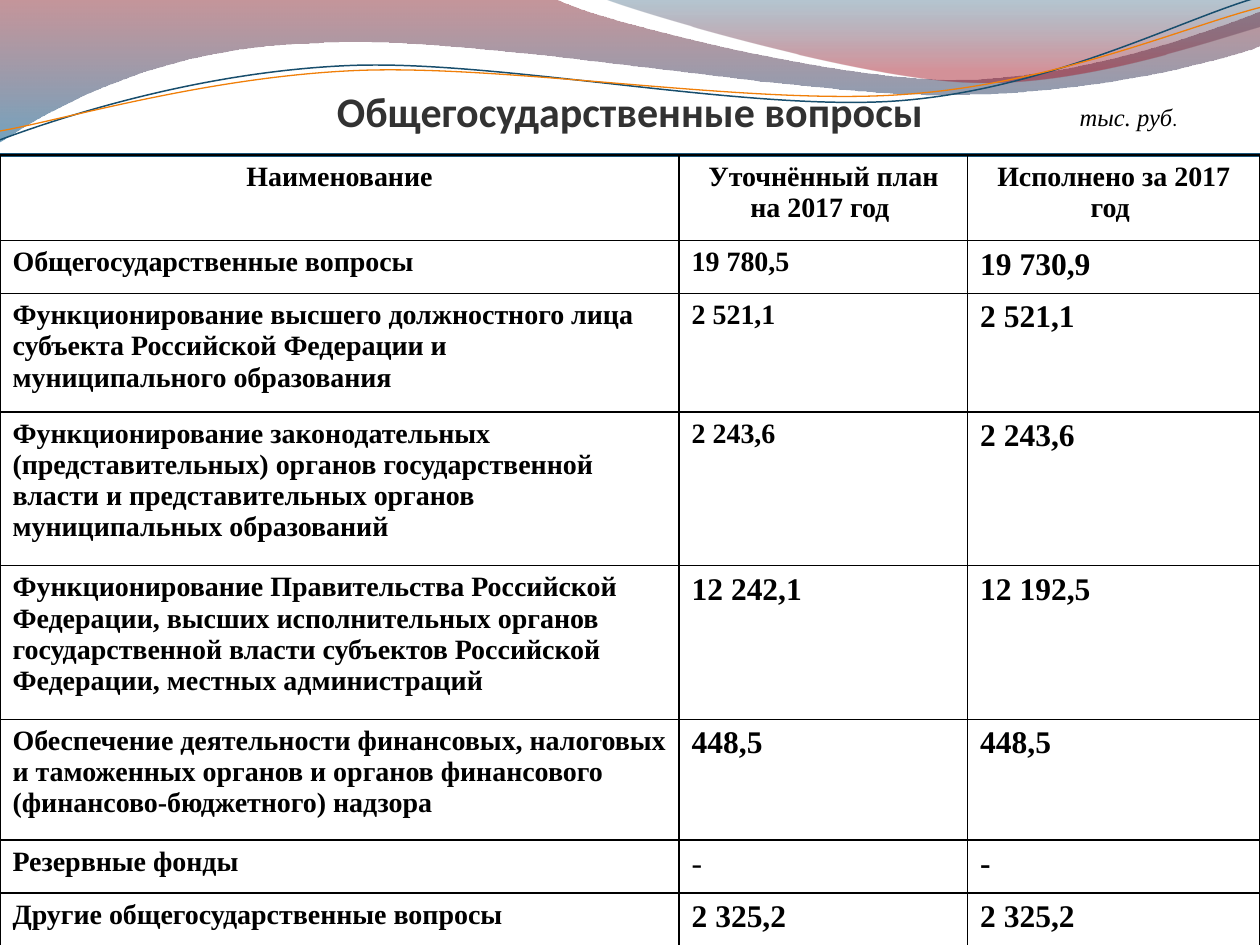
from math import cos, radians, sin

from lxml.etree import SubElement
from pptx import Presentation
from pptx.dml.color import RGBColor as RGB
from pptx.enum.shapes import MSO_CONNECTOR as Conn
from pptx.enum.text import MSO_ANCHOR as Anchor, PP_ALIGN as Align
from pptx.oxml.ns import qn
from pptx.util import Inches, Pt

BLACK = RGB(0x00, 0x00, 0x00)
GREY = RGB(0x32, 0x32, 0x32)
WINE = RGB(0x7E, 0x16, 0x21)
BLUE = RGB(0x00, 0x56, 0x89)
NAVY = RGB(0x09, 0x44, 0x67)
RED = RGB(0xA1, 0x0F, 0x1F)
TEAL = RGB(0x18, 0x4E, 0x6D)
ORANGE = RGB(0xF0, 0x7F, 0x09)
STEEL = RGB(0x1B, 0x58, 0x7C)
SERIF, SANS = "Times New Roman", "Calibri"

# Each outline is a start point, then corners (2 numbers) or Bezier curves (6).
LEFT_WAVE = [(0, 0), (4.4, -0.01), (4.76, 0.17, 6.64, 0.63, 7.58, 0.63),
             (8.53, 0.63, 9.58, 0.26, 10, 0.09), (10.01, 0.36),
             (9.83, 0.44, 8.7, 0.76, 7.46, 0.75),
             (6.22, 0.75, 3.82, 0.28, 2.57, 0.34),
             (1.29, 0.36, 0.46, 0.83, -0.01, 1.13)]
RIGHT_WAVE = [(4.79, -0.01), (5.09, 0.11, 6.82, 0.62, 7.69, 0.65),
              (8.56, 0.69, 9.61, 0.32, 10, 0.21), (10, 0)]
TEAL_CURVE = [(0, 1.11), (0.48, 0.93, 1.58, 0.57, 2.77, 0.52),
              (3.95, 0.47, 5.93, 0.89, 7.13, 0.8),
              (8.33, 0.71, 9.38, 0.15, 9.98, -0.02)]
ORANGE_CURVE = [(0, 1.04), (0.47, 0.96, 1.64, 0.61, 2.83, 0.56),
                (4.03, 0.51, 5.97, 0.84, 7.17, 0.75),
                (8.36, 0.67, 9.41, 0.21, 10, 0.06)]
TILT = -2.7

COLS = [5.39, 2.29, 2.32]
HEAD = ["Наименование", "Уточнённый план на 2017 год ", "Исполнено за 2017 год "]
# Row height, name, plan, plan text size, result
ROWS = [
    (0.42, "Общегосударственные вопросы", "19 780,5", 16, "19 730,9"),
    (0.94, "Функционирование высшего должностного лица субъекта Российской "
           "Федерации и муниципального образования", "2 521,1", 16, "2 521,1"),
    (1.22, "Функционирование законодательных (представительных) органов "
           "государственной власти и представительных органов муниципальных "
           "образований", "2 243,6", 16, "2 243,6"),
    (1.22, "Функционирование Правительства Российской Федерации, высших "
           "исполнительных органов государственной власти субъектов Российской "
           "Федерации, местных администраций", "12 242,1", 18, "12 192,5"),
    (0.96, "Обеспечение деятельности финансовых, налоговых и таможенных органов "
           "и органов финансового (финансово-бюджетного) надзора",
     "448,5", 18, "448,5"),
    (0.42, "Резервные фонды", "-", 18, "-"),
    (0.42, "Другие общегосударственные вопросы", "2 325,2", 18, "2 325,2"),
]


def write(frame, text, size=16, font=SERIF, color=BLACK, bold=False,
          italic=False, align=Align.LEFT):
    """Add a run to the frame's first paragraph."""
    para = frame.paragraphs[0]
    para.alignment = align
    run = para.add_run()
    run.text = text
    face = run.font
    face.size, face.name, face.bold, face.italic = Pt(size), font, bold, italic
    face.color.rgb = color


def pairs(part):
    return list(zip(part[::2], part[1::2]))


def level(route, mid):
    """Turn a route about mid so that tilting the shape puts it back."""
    c, s = cos(radians(-TILT)), sin(radians(-TILT))
    x0, y0 = mid
    return [tuple(v for x, y in pairs(part) for v in (
        x0 + (x - x0) * c - (y - y0) * s, y0 + (x - x0) * s + (y - y0) * c))
        for part in route]


def outline(slide, box, route, close):
    left, top = box[:2]
    points = [(Inches(left + x), Inches(top + y))
              for part in route for x, y in pairs(part)]
    form = slide.shapes.build_freeform(*points[0])
    form.add_line_segments(points[1:], close=close)
    shape = form.convert_to_shape()
    shape.shadow.inherit = False
    # Join each three points of a curve into one Bezier segment.
    lines = iter(list(shape.element.iter(qn("a:lnTo"))))
    for part in route[1:]:
        first, *rest = [next(lines) for _ in pairs(part)]
        if rest:
            bend = first.makeelement(qn("a:cubicBezTo"))
            first.addprevious(bend)
            for line in (first, *rest):
                bend.append(line[0])
                line.getparent().remove(line)
    return shape


def wave(slide, box, route, stops):
    """Draw a shape shaded downwards; stops hold place, colour and opacity."""
    shape = outline(slide, box, route, True)
    shape.line.fill.background()
    fill = shape.fill
    fill.gradient()
    fill.gradient_angle = 270
    for stop, (place, color, alpha) in zip(fill.gradient_stops, stops):
        stop.position = place
        stop.color.rgb = color
    tints = shape.element.spPr.iter(qn("a:srgbClr"))
    for tint, (place, color, alpha) in zip(tints, stops):
        SubElement(tint, qn("a:alpha"), val=str(alpha * 1000))


def curve(slide, box, route, mid, color, width):
    shape = outline(slide, box, level(route, mid), False)
    shape.rotation = TILT
    shape.fill.background()
    shape.line.color.rgb = color
    shape.line.width = Pt(width)


def banner(slide, box):
    wave(slide, box, LEFT_WAVE, [(0, WINE, 45), (1, BLUE, 55)])
    wave(slide, box, RIGHT_WAVE, [(0, NAVY, 30), (0.8, RED, 45)])
    curve(slide, box, TEAL_CURVE, (4.99, 0.58), TEAL, 0.85)
    curve(slide, box, ORANGE_CURVE, (5, 0.59), ORANGE, 0.75)


def rule(slide, box):
    left, top, width, _ = box
    line = slide.shapes.add_connector(Conn.STRAIGHT, Inches(left + width),
                                      Inches(top), Inches(left), Inches(top))
    line.line.color.rgb = STEEL
    line.line.width = Pt(2)
    SubElement(line.element.spPr, qn("a:effectLst"))


def style(cell):
    """Give the cell thin black borders and no fill."""
    props = cell._tc.get_or_add_tcPr()
    for side in "LRTB":
        edge = SubElement(props, qn(f"a:ln{side}"), w=str(Pt(1)))
        SubElement(SubElement(edge, qn("a:solidFill")), qn("a:srgbClr"),
                   val=str(BLACK))
    cell.fill.background()


def budget(slide, box):
    grid = slide.shapes.add_table(len(ROWS) + 1, len(COLS),
                                  *map(Inches, box)).table
    grid.first_row = grid.horz_banding = False
    for col, width in zip(grid.columns, COLS):
        col.width = Inches(width)
    for row, height in zip(grid.rows, [0.68] + [r[0] for r in ROWS]):
        row.height = Inches(height)
    for c, text in enumerate(HEAD):
        write(grid.cell(0, c).text_frame, text, bold=True, align=Align.CENTER)
    for r, (_, name, plan, size, done) in enumerate(ROWS, 1):
        write(grid.cell(r, 0).text_frame, name, bold=True)
        write(grid.cell(r, 1).text_frame, plan, size=size, bold=plan != "-")
        write(grid.cell(r, 2).text_frame, done, size=18, bold=True)
    for cell in grid.iter_cells():
        style(cell)


def label(slide, box):
    frame = slide.shapes.add_textbox(*map(Inches, box)).text_frame
    frame.word_wrap = True
    return frame


def unit(slide, box):
    frame = label(slide, box)
    write(frame, "тыс. руб", size=14, italic=True)
    write(frame, ".", size=11, font=SANS)


def title(slide, box):
    frame = label(slide, box)
    frame.vertical_anchor = Anchor.BOTTOM
    frame.margin_left = frame.margin_right = frame.margin_bottom = 0
    write(frame, "Общегосударственные вопросы", size=24, font=SANS, color=GREY,
          bold=True, align=Align.CENTER)


def main():
    deck = Presentation()
    deck.slide_width, deck.slide_height = Inches(10), Inches(7.5)
    slide = deck.slides.add_slide(deck.slide_layouts[6])
    banner(slide, (0, 0, 10, 1.13))
    rule(slide, (0, 1.23, 10, 0))
    budget(slide, (0, 1.23, 10, 6.27))
    unit(slide, (8.47, 0.76, 1.42, 0.39))
    title(slide, (0, 0.21, 10, 0.87))
    deck.save("out.pptx")


if __name__ == "__main__":
    main()
